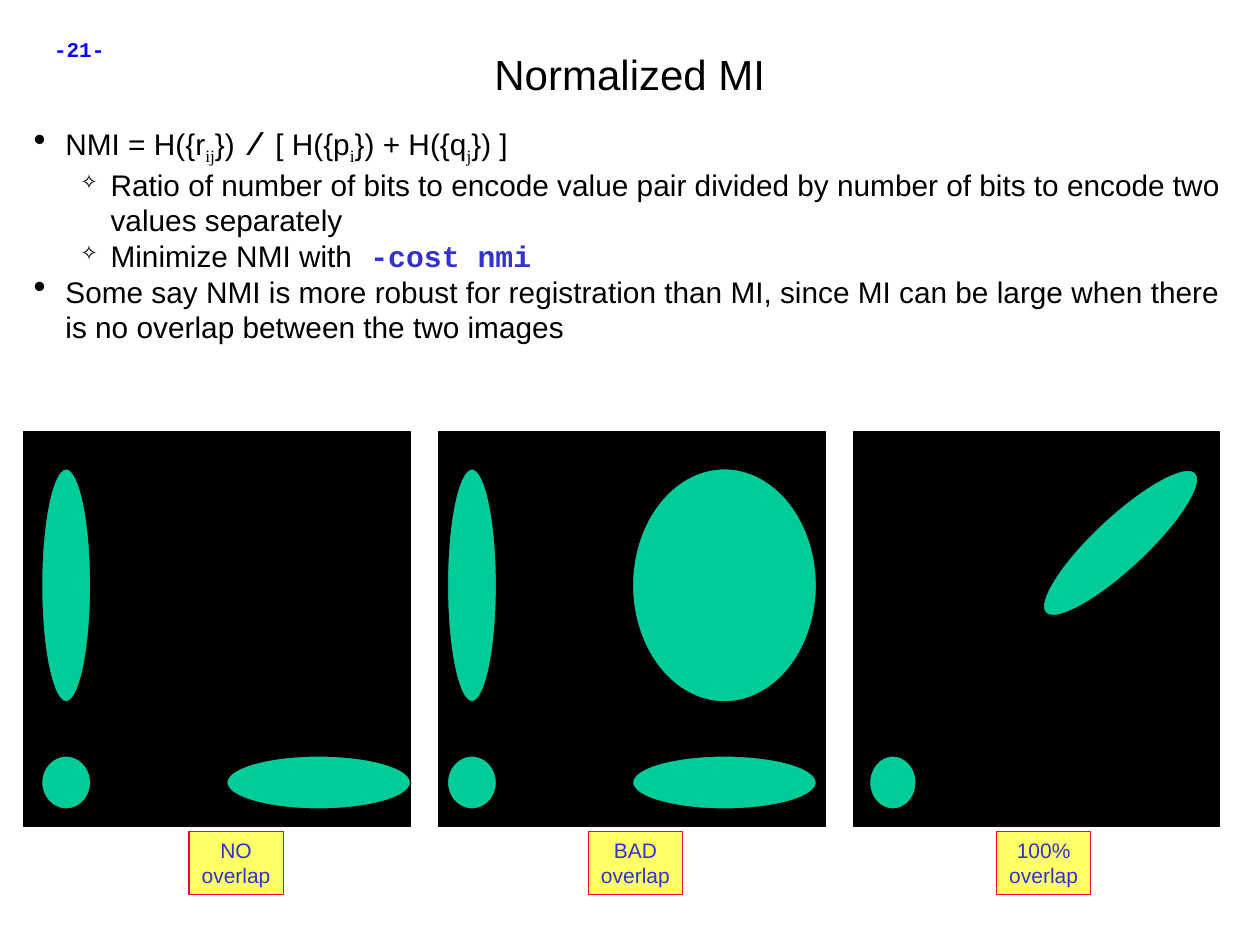
from pptx import Presentation
from pptx.dml.color import RGBColor
from pptx.enum.shapes import MSO_SHAPE
from pptx.enum.text import MSO_ANCHOR, PP_ALIGN
from pptx.oxml import parse_xml
from pptx.oxml.ns import nsdecls
from pptx.util import Cm, Pt

RECTANGLE, OVAL = MSO_SHAPE.RECTANGLE, MSO_SHAPE.OVAL
LEFT, CENTER = PP_ALIGN.LEFT, PP_ALIGN.CENTER
TOP, MIDDLE = MSO_ANCHOR.TOP, MSO_ANCHOR.MIDDLE

SANS, MONO, SERIF = "Arial", "Courier New", "Times New Roman"
BLACK, GREEN, YELLOW = "000000", "00CC99", "FFFF66"
RED, BLUE, PAGE_BLUE = "F60049", "3333CC", "0901FF"

# Bullet levels: character, size in percent, text indent and hanging in cm
BULLETS = [("•", 120, 0.64, 0.64), ("✧", 70, 1.55, 0.61)]


def color(hex_string):
    return RGBColor.from_string(hex_string)


class SlideBuilder:
    """Holds the text style and the current slide."""

    def __init__(self, slide, font=SANS, size=17, text_color=BLACK):
        self.slide = slide
        self.font, self.size, self.text_color = font, size, text_color

    def format_run(self, run, font=None, size=None, text_color=None,
                   bold=False, subscript=False):
        run.font.name = font or self.font
        run.font.size = Pt(size or self.size)
        run.font.bold = bold
        run.font.color.rgb = color(text_color or self.text_color)
        if subscript:
            run.font._element.set("baseline", "-25000")

    def text(self, box, content, align=LEFT, anchor=TOP, **style):
        left, top, width, height = map(Cm, box)
        shape = self.slide.shapes.add_textbox(left, top, width, height)
        frame = shape.text_frame
        frame.word_wrap = True
        frame.vertical_anchor = anchor
        frame.text = content
        for paragraph in frame.paragraphs:
            paragraph.alignment = align
            for run in paragraph.runs:
                self.format_run(run, **style)
        return frame

    def bullets(self, box, items):
        frame = self.text(box, "")
        for index, (level, runs) in enumerate(items):
            paragraph = frame.add_paragraph() if index else frame.paragraphs[0]
            paragraph.level = level
            self.add_bullet(paragraph, *BULLETS[level])
            for content, style in runs:
                run = paragraph.add_run()
                run.text = content
                self.format_run(run, **style)

    def add_bullet(self, paragraph, character, percent, indent, hanging):
        properties = paragraph._p.get_or_add_pPr()
        properties.set("marL", str(Cm(indent)))
        properties.set("indent", str(-Cm(hanging)))
        for tag in (f'<a:buClr {nsdecls("a")}><a:srgbClr val="{BLACK}"/></a:buClr>',
                    f'<a:buSzPct {nsdecls("a")} val="{percent * 1000}"/>',
                    f'<a:buChar {nsdecls("a")} char="{character}"/>'):
            properties.append(parse_xml(tag))

    def shape(self, kind, box, fill, line=BLACK, rotation=0):
        shape = self.slide.shapes.add_shape(kind, *map(Cm, box))
        shape.shadow.inherit = False
        shape.fill.solid()
        shape.fill.fore_color.rgb = color(fill)
        shape.line.color.rgb = color(line)
        shape.line.width = Pt(0.75)
        shape.rotation = rotation
        return shape

    def panel(self, left, width, ovals):
        self.shape(RECTANGLE, (left, 8.71, width, 7.95), BLACK)
        for box, rotation in ovals:
            self.shape(OVAL, box, GREEN, rotation=rotation)

    def label(self, left, content):
        frame = self.shape(RECTANGLE, (left, 16.76, 1.9, 1.27), YELLOW, RED).text_frame
        frame.word_wrap = False
        frame.vertical_anchor = TOP
        frame.text = content
        for paragraph in frame.paragraphs:
            paragraph.alignment = CENTER
            for run in paragraph.runs:
                self.format_run(run, size=12, text_color=BLUE)


def main():
    presentation = Presentation()
    presentation.slide_width, presentation.slide_height = Cm(25.4), Cm(19.05)
    builder = SlideBuilder(presentation.slides.add_slide(presentation.slide_layouts[6]))

    # Page number and title
    number = builder.text((0.84, 0.64, 2.11, 1.73), "-21-", font=MONO, size=12,
                          text_color=PAGE_BLUE, bold=True)
    number.paragraphs[0].line_spacing = 0.95
    builder.text((1.9, 0.43, 21.59, 2.11), "Normalized MI", CENTER, MIDDLE, size=24)

    # Formula and remarks
    subscript = {"font": SERIF, "subscript": True}
    builder.bullets((0.43, 2.34, 24.56, 15.88), [
        (0, [("NMI = H({r", {}), ("ij", subscript), ("}) ", {}),
             (" ⁄ ", {"size": 19, "bold": True}),
             (" [ H({p", {}), ("i", subscript), ("}) + H({q", {}),
             ("j", subscript), ("}) ]", {})]),
        (1, [("Ratio of number of bits to encode value pair divided by "
              "number of bits to encode two values separately", {})]),
        (1, [("Minimize NMI with", {}),
             (" -cost nmi", {"font": MONO, "text_color": BLUE, "bold": True})]),
        (0, [("Some say NMI is more robust for registration than MI, since MI "
              "can be large when there is no overlap between the two images", {})]),
    ])

    # Joint histograms: no overlap, bad overlap, full overlap
    for left, oval_left in ((0.48, 0.84), (8.84, 9.02)):
        wide_left = oval_left + 3.73
        ovals = [((wide_left, 15.24, 3.71, 1.07), 0),
                 ((oval_left, 9.45, 0.99, 4.7), 0),
                 ((oval_left, 15.24, 0.99, 1.07), 0)]
        if left > 1:
            ovals.append(((wide_left, 9.45, 3.71, 4.7), 0))
        builder.panel(left, 7.8, ovals)
    builder.panel(17.2, 7.39, [((20.52, 10.41, 4.14, 1.07), 317),
                               ((17.53, 15.24, 0.94, 1.07), 0)])

    # Labels below the panels
    for left, word in ((3.81, "NO"), (11.86, "BAD"), (20.09, "100%")):
        builder.label(left, f"{word}\noverlap")

    presentation.save("out.pptx")


if __name__ == "__main__":
    main()
